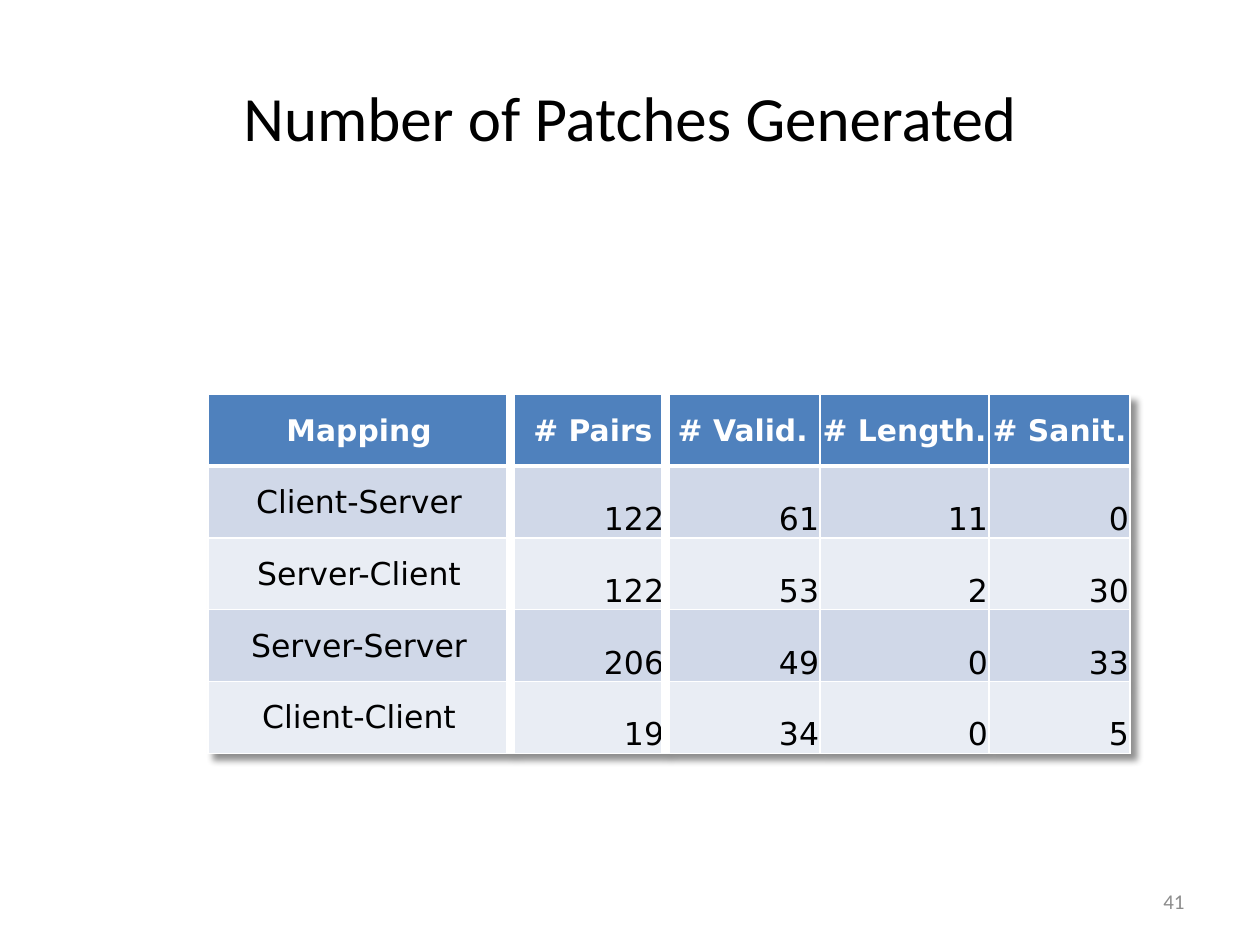
from lxml import etree
from pptx import Presentation
from pptx.dml.color import RGBColor
from pptx.enum.text import MSO_ANCHOR, PP_ALIGN
from pptx.oxml.ns import qn
from pptx.util import Inches, Pt

MIDDLE, BOTTOM = MSO_ANCHOR.MIDDLE, MSO_ANCHOR.BOTTOM
CENTER, RIGHT = PP_ALIGN.CENTER, PP_ALIGN.RIGHT
TITLE_ONLY = 5

HEADER = ["Mapping", " # Pairs", "# Valid.", "# Length.", "# Sanit."]
RESULTS = [
    ["Client-Server", 122, 61, 11, 0],
    ["Server-Client", 122, 53, 2, 30],
    ["Server-Server", 206, 49, 0, 33],
    ["Client-Client", 19, 34, 0, 5],
]
COLUMN_WIDTHS = [2.4, 1.23, 1.23, 1.34, 1.12]
ROW_HEIGHT = 0.57
THIN, HEADER_RULE, THICK = 1, 3, 6
THICK_DIVIDERS = (1, 2)  # column edges, counted from the left


def color(value):
    return RGBColor.from_string(value)


def add_xml(parent, tag, **attributes):
    return etree.SubElement(parent, qn(tag), attributes)


class SlideBuilder:
    body_font = "Calibri"
    table_font = "DejaVu Sans"
    header_fill = "4F81BD"
    band_fills = ("D0D8E8", "E9EDF4")
    line_color = "FFFFFF"
    cell_margins = {"margin_left": Inches(0.01), "margin_right": Inches(0.01),
                    "margin_top": Inches(0.01), "margin_bottom": 0}

    def __init__(self, deck):
        self.slide = deck.slides.add_slide(deck.slide_layouts[TITLE_ONLY])

    def add_text(self, frame, text, align, size, font_color, font, bold=False):
        para = frame.paragraphs[0]
        para.alignment = align
        span = para.add_run()
        span.text = text
        formats = {"size": Pt(size), "name": font, "bold": bold}
        for name, value in formats.items():
            setattr(span.font, name, value)
        span.font.color.rgb = color(font_color)

    def title(self, text, left, top, width, height):
        box = self.slide.shapes.title
        place = {"left": left, "top": top, "width": width, "height": height}
        for name, value in place.items():
            setattr(box, name, Inches(value))
        box.text_frame.vertical_anchor = MIDDLE
        self.add_text(box.text_frame, text, CENTER, 36, "000000", self.body_font)

    def page_number(self, text, *place):
        box = self.slide.shapes.add_textbox(*map(Inches, place))
        box.text_frame.word_wrap = True
        box.text_frame.vertical_anchor = MIDDLE
        self.add_text(box.text_frame, text, RIGHT, 12, "8C8C8C", self.body_font)

    def borders(self, cell, widths):
        properties = cell._tc.get_or_add_tcPr()
        for side, width in widths.items():
            line = add_xml(properties, f"a:ln{side}", w=str(Pt(width)))
            fill = add_xml(line, "a:solidFill")
            add_xml(fill, "a:srgbClr", val=self.line_color)

    def table_shadow(self, table):
        effects = etree.Element(qn("a:effectLst"))
        shadow = add_xml(effects, "a:outerShdw", blurRad="50800", dist="63500",
                         dir="2700000", algn="tl", rotWithShape="0")
        shade = add_xml(shadow, "a:srgbClr", val="000000")
        add_xml(shade, "a:alpha", val="43000")
        table._tbl.tblPr.insert(0, effects)

    def cell(self, cell, text, row, column):
        is_header = row == 0
        is_label = is_header or column == 0

        def divider(edge):
            return THICK if edge in THICK_DIVIDERS else THIN

        widths = {"L": divider(column), "R": divider(column + 1),
                  "T": THIN, "B": HEADER_RULE if is_header else THIN}
        if column == 0:
            del widths["L"]
        self.borders(cell, widths)
        cell.fill.solid()
        fill = self.header_fill if is_header else self.band_fills[(row - 1) % 2]
        cell.fill.fore_color.rgb = color(fill)
        for name, value in self.cell_margins.items():
            setattr(cell, name, value)
        cell.vertical_anchor = MIDDLE if is_label else BOTTOM
        self.add_text(cell.text_frame, text, CENTER if is_label else RIGHT,
                      17 if is_header else 18,
                      "FFFFFF" if is_header else "000000",
                      self.table_font, is_header)

    def table(self, rows, left, top):
        size = (sum(COLUMN_WIDTHS), ROW_HEIGHT * len(rows))
        table = self.slide.shapes.add_table(
            len(rows), len(COLUMN_WIDTHS), *map(Inches, (left, top, *size))).table
        self.table_shadow(table)
        for column, width in zip(table.columns, COLUMN_WIDTHS):
            column.width = Inches(width)
        for row, values in enumerate(rows):
            table.rows[row].height = Inches(ROW_HEIGHT)
            for column, value in enumerate(values):
                self.cell(table.cell(row, column), str(value), row, column)


def main():
    deck = Presentation()
    deck.slide_width, deck.slide_height = Inches(10), Inches(7.5)
    page = SlideBuilder(deck)

    # Title
    page.title("Number of Patches Generated", 0.5, 0.3, 9, 1.25)
    # Patch counts for each mapping
    page.table([HEADER, *RESULTS], 1.65, 3.13)
    # Page number
    page.page_number("41", 7.17, 6.95, 2.33, 0.4)

    deck.save("out.pptx")


if __name__ == "__main__":
    main()
